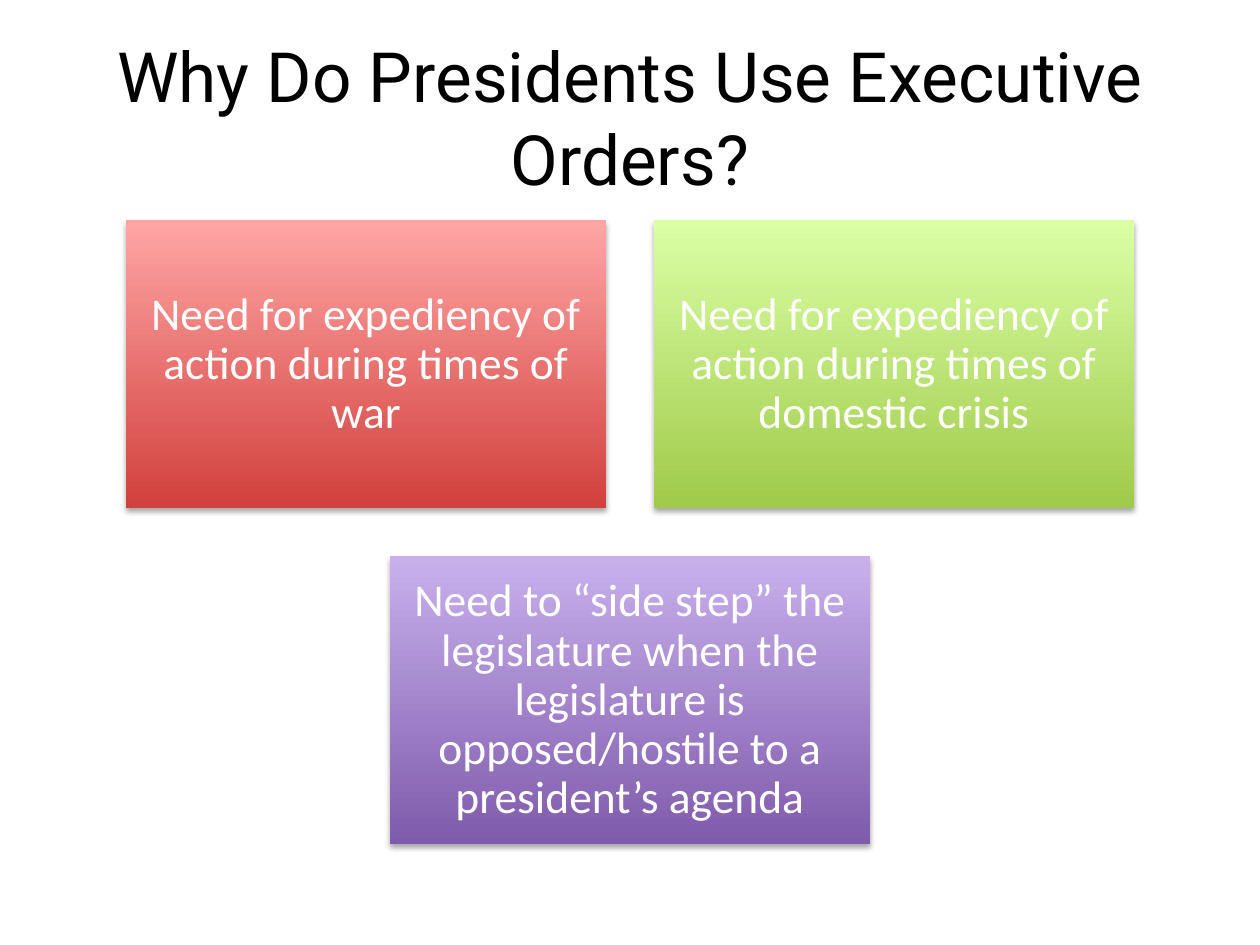
import pptx
import pptx.dml.color
import pptx.enum.shapes
import pptx.enum.text
import pptx.oxml
import pptx.oxml.ns
import pptx.util

Pt = pptx.util.Pt
ALIGN = pptx.enum.text.PP_ALIGN
ANCHOR = pptx.enum.text.MSO_ANCHOR

CARDS = [
    ("Need for expediency of action during times of war", "D1403C", "FFA6A5"),
    ("Need for expediency of action during times of domestic crisis",
     "A0CA4A", "DAFFA5"),
    ("Need to “side step” the legislature when the legislature is "
     "opposed/hostile to a president’s agenda", "7F5BAB", "C8B0ED"),
]
COLS = 2


def color(code):
    return pptx.dml.color.RGBColor.from_string(code)


def assign(item, values):
    for name, value in values.items():
        setattr(item, name, value)


def write(shape, text, font, inset, spacing):
    frame = shape.text_frame
    assign(frame, {
        "word_wrap": True, "vertical_anchor": ANCHOR.MIDDLE,
        "margin_left": inset[0], "margin_right": inset[0],
        "margin_top": inset[1], "margin_bottom": inset[1],
    })
    para = frame.paragraphs[0]
    assign(para, {"alignment": ALIGN.CENTER, "line_spacing": spacing})
    run = para.add_run()
    run.text = text
    hue = font.pop("color")
    assign(run.font, font)
    run.font.color.rgb = color(hue)


def add_shade(shape):
    # Soft shadow straight below the card
    shape.shadow.inherit = False
    effects = shape._element.spPr.find(pptx.oxml.ns.qn("a:effectLst"))
    effects.append(pptx.oxml.parse_xml(
        f'<a:outerShdw {pptx.oxml.ns.nsdecls("a")} blurRad="{Pt(3.1)}" '
        f'dist="{Pt(1.8)}" dir="5400000" rotWithShape="0">'
        '<a:srgbClr val="000000"><a:alpha val="35000"/></a:srgbClr>'
        '</a:outerShdw>'))


def add_title(slide, left, top, width, height):
    box = slide.shapes.add_textbox(Pt(left), Pt(top), Pt(width), Pt(height))
    font = {"name": "Roboto", "size": Pt(39.6), "color": "000000"}
    write(box, "Why Do Presidents Use Executive Orders?", font,
          (Pt(7.2), Pt(3.6)), 1.0)


def add_card(slide, left, top, width, height, text, dark, light):
    card = slide.shapes.add_shape(
        pptx.enum.shapes.MSO_SHAPE.RECTANGLE,
        Pt(left), Pt(top), Pt(width), Pt(height))
    card.line.fill.background()
    card.fill.gradient()
    card.fill.gradient_angle = 90
    for stop, code in zip(card.fill.gradient_stops, (dark, light)):
        stop.color.rgb = color(code)
    add_shade(card)
    font = {"name": "Calibri", "size": Pt(26), "color": "FFFFFF"}
    write(card, text, font, (Pt(7.8), Pt(7.8)), 0.9)


def add_grid(slide, left, top, width):
    # Gaps are a tenth of a card's width; a short row is centred
    wide = width / (COLS + (COLS - 1) * 0.1)
    high, gap = wide * 0.6, wide * 0.1
    for start in range(0, len(CARDS), COLS):
        row = CARDS[start:start + COLS]
        span = len(row) * wide + (len(row) - 1) * gap
        first = left + (width - span) / 2
        y = top + start // COLS * (high + gap)
        for col, card in enumerate(row):
            add_card(slide, first + col * (wide + gap), y, wide, high, *card)


def main():
    deck = pptx.Presentation()
    assign(deck, {"slide_width": Pt(720), "slide_height": Pt(540)})
    slide = deck.slides.add_slide(deck.slide_layouts[6])
    add_title(slide, 36, 21.6, 648, 90)
    add_grid(slide, 72, 126, 576)
    deck.save("out.pptx")


if __name__ == "__main__":
    main()
